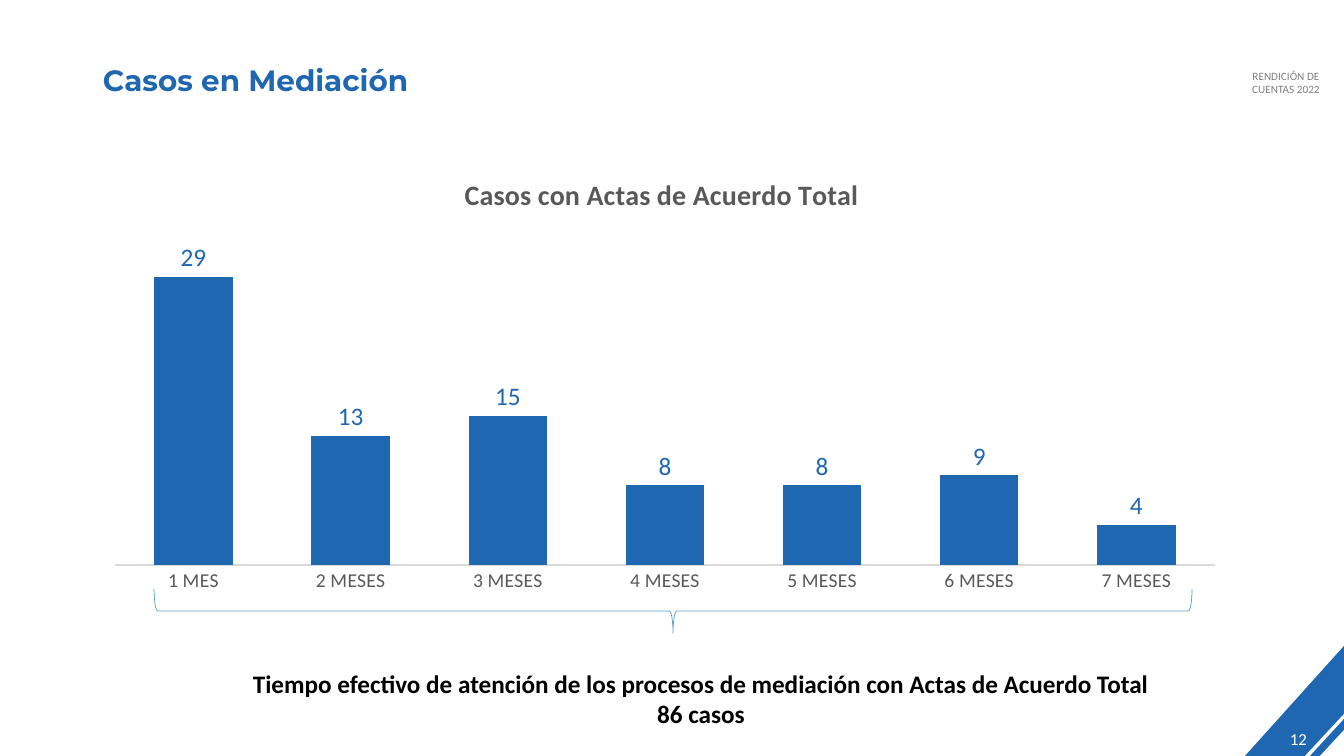
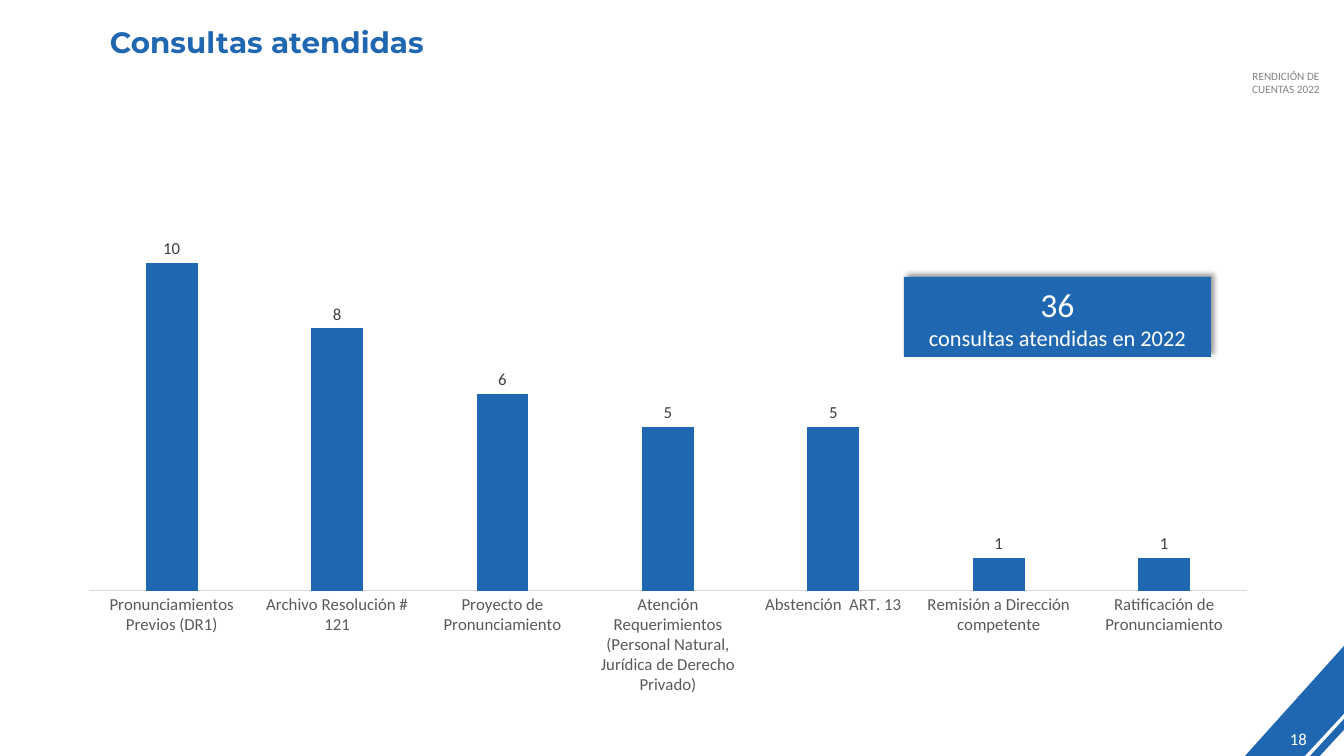
from lxml import etree
from pptx import Presentation
from pptx import util as u
from pptx.chart.data import CategoryChartData
from pptx.dml.color import RGBColor
from pptx.enum import chart as charts, shapes, text
from pptx.oxml import ns

PX = u.Inches(1) / 100.8
WIDTH, HEIGHT = 1344, 756
COLORS = {
    "blue": "1F67B0", "white": "FFFFFF", "black": "000000", "brace": "5B9BD5",
    "header": "808080", "axis_text": "595959", "axis_line": "D9D9D9",
    "label": "404040",
}
rgb = {name: RGBColor.from_string(value) for name, value in COLORS.items()}


def write(shape, lines, color, bold=False, align=text.PP_ALIGN.CENTER,
          anchor=text.MSO_ANCHOR.TOP):
    """Fill a shape with (text, size, font name) lines, one paragraph each."""
    frame = shape.text_frame
    frame.word_wrap = True
    frame.vertical_anchor = anchor
    for index, (line, size, name) in enumerate(lines):
        para = frame.add_paragraph() if index else frame.paragraphs[0]
        para.text = line
        para.alignment = align
        para.font.size, para.font.name = u.Pt(size), name
        para.font.bold, para.font.color.rgb = bold, rgb[color]


def place(element, index, target, **fractions):
    """Give a chart part a manual layout, in fractions of the chart."""
    for old in element.findall(ns.qn("c:layout")):
        element.remove(old)
    layout = etree.Element(ns.qn("c:layout"))
    manual = etree.SubElement(layout, ns.qn("c:manualLayout"))
    settings = {"layoutTarget": target, "xMode": "edge", "yMode": "edge", **fractions}
    for tag, value in settings.items():
        if value is not None:
            etree.SubElement(manual, ns.qn(f"c:{tag}")).set("val", str(value))
    element.insert(index, layout)


pages = [
    {
        "number": "12", "title": "Casos en Mediación", "title_at": (93, 57),
        "chart_at": (93, 147, 1146, 455), "plot_at": (115, 217, 1100, 348),
        "chart_title": "Casos con Actas de Acuerdo Total",
        "cases": {"1 MES": 29, "2 MESES": 13, "3 MESES": 15, "4 MESES": 8,
                  "5 MESES": 8, "6 MESES": 9, "7 MESES": 4},
        "maximum": 35, "gap": 100, "overlap": -24, "axis_size": 14,
        "axis_width": 1, "label_size": 18, "label_color": "blue",
    },
    {
        "number": "18", "title": "Consultas atendidas", "title_at": (100, 19),
        "chart_at": (65, 187, 1207, 518), "plot_at": (89, 197, 1158, 394),
        "chart_title": None,
        "cases": {
            "Pronunciamientos Previos (DR1)": 10,
            "Archivo Resolución # 121": 8,
            "Proyecto de Pronunciamiento": 6,
            "Atención Requerimientos (Personal Natural, Jurídica de Derecho Privado)": 5,
            "Abstención  ART. 13": 5,
            "Remisión a Dirección competente": 1,
            "Ratificación de Pronunciamiento": 1,
        },
        "maximum": 12, "gap": 219, "overlap": -27, "axis_size": 12,
        "axis_width": 0.75, "label_size": 12, "label_color": "label",
    },
]

deck = Presentation()
deck.slide_width, deck.slide_height = int(WIDTH * PX), int(HEIGHT * PX)

for content in pages:
    page = deck.slides.add_slide(deck.slide_layouts[6])

    # Corner triangles, all meeting at the bottom right
    for width, height, color in [(99, 110, "blue"), (39, 42, "white"),
                                 (34, 37, "blue"), (24, 26, "white")]:
        at = (WIDTH - width, HEIGHT - height, width, height)
        corner = page.shapes.add_shape(
            shapes.MSO_SHAPE.RIGHT_TRIANGLE, *[int(n * PX) for n in at])
        corner.shadow.inherit = False
        corner.fill.solid()
        corner.fill.fore_color.rgb = rgb[color]
        corner.line.fill.background()
        corner._element.spPr.xfrm.set("flipH", "1")

    # Header, page number and title
    header = page.shapes.add_textbox(*[int(n * PX) for n in (1228, 64, 116, 37)])
    write(header, [("RENDICIÓN DE", 8, "Calibri"), ("CUENTAS 2022", 8, "Calibri")],
          "header")
    number = page.shapes.add_textbox(*[int(n * PX) for n in (1271, 722, 55, 34)])
    write(number, [(content["number"], 12, "Calibri")], "white",
          anchor=text.MSO_ANCHOR.MIDDLE)
    title = page.shapes.add_textbox(
        *[int(n * PX) for n in (*content["title_at"], 909, 45)])
    write(title, [(content["title"], 21, "Montserrat")], "blue", bold=True,
          align=text.PP_ALIGN.LEFT)

    # Column chart
    data = CategoryChartData()
    data.categories = list(content["cases"])
    data.add_series("Casos", list(content["cases"].values()))
    chart = page.shapes.add_chart(
        charts.XL_CHART_TYPE.COLUMN_CLUSTERED,
        *[int(n * PX) for n in content["chart_at"]], data).chart
    chart.has_legend = False
    chart.font.name, chart.font.size = "Calibri", u.Pt(10)
    chart.font.color.rgb = rgb["black"]

    plot = chart.plots[0]
    plot.vary_by_categories = False
    plot.gap_width, plot.overlap = content["gap"], content["overlap"]
    columns = plot.series[0].format.fill
    columns.solid()
    columns.fore_color.rgb = rgb["blue"]
    plot.has_data_labels = True
    labels = plot.data_labels
    labels.show_value = True
    labels.position = charts.XL_LABEL_POSITION.OUTSIDE_END
    labels.font.name, labels.font.size = "Calibri", u.Pt(content["label_size"])
    labels.font.color.rgb = rgb[content["label_color"]]

    values = chart.value_axis
    values.visible = False
    values.has_major_gridlines = False
    values.minimum_scale, values.maximum_scale = 0, content["maximum"]
    axis = chart.category_axis
    axis.major_tick_mark = charts.XL_TICK_MARK.NONE
    axis.format.line.color.rgb = rgb["axis_line"]
    axis.format.line.width = u.Pt(content["axis_width"])
    axis.tick_labels.font.name = "Calibri"
    axis.tick_labels.font.size = u.Pt(content["axis_size"])
    axis.tick_labels.font.color.rgb = rgb["axis_text"]

    left, top, width, height = content["chart_at"]
    x, y, w, h = content["plot_at"]
    place(chart._chartSpace.chart.plotArea, 0, "inner",
          x=round((x - left) / width, 4), y=round((y - top) / height, 4),
          w=round(w / width, 4), h=round(h / height, 4))

    chart.has_title = content["chart_title"] is not None
    if chart.has_title:
        heading = chart.chart_title
        write(heading, [(content["chart_title"], 20, "Calibri")], "axis_text", bold=True)
        heading.include_in_layout = False
        place(heading._element, 1, None, x=0.32, y=0.05)

    if content["number"] == "12":
        # Caption and brace under the columns
        caption = page.shapes.add_textbox(*[int(n * PX) for n in (242, 663, 918, 72)])
        write(caption, [
            ("Tiempo efectivo de atención de los procesos de mediación con Actas "
             "de Acuerdo Total", 18, "Calibri"),
            ("86 casos", 18, "Calibri"),
        ], "black", bold=True)
        brace = page.shapes.add_shape(
            shapes.MSO_SHAPE.RIGHT_BRACE, *[int(n * PX) for n in (651, 92, 44, 1038)])
        brace.rotation = 90
        brace.shadow.inherit = False
        brace.fill.background()
        brace.line.color.rgb, brace.line.width = rgb["brace"], u.Pt(0.5)
    else:
        # Total with a soft shadow to the upper right
        total = page.shapes.add_shape(
            shapes.MSO_SHAPE.RECTANGLE, *[int(n * PX) for n in (904, 277, 307, 80)])
        total.fill.solid()
        total.fill.fore_color.rgb = rgb["blue"]
        total.line.fill.background()
        total.shadow.inherit = False
        effects = total._element.spPr.find(ns.qn("a:effectLst"))
        shadow = etree.SubElement(
            effects, ns.qn("a:outerShdw"), blurRad=str(u.Pt(4)), dist=str(u.Pt(3)),
            dir=str(315 * 60000), algn="bl", rotWithShape="0")
        shade = etree.SubElement(shadow, ns.qn("a:srgbClr"), val=COLORS["black"])
        etree.SubElement(shade, ns.qn("a:alpha"), val="40000")
        write(total, [("36", 24, "Calibri"), ("consultas atendidas en 2022", 16, "Calibri")],
              "white", anchor=text.MSO_ANCHOR.MIDDLE)

deck.save("out.pptx")
